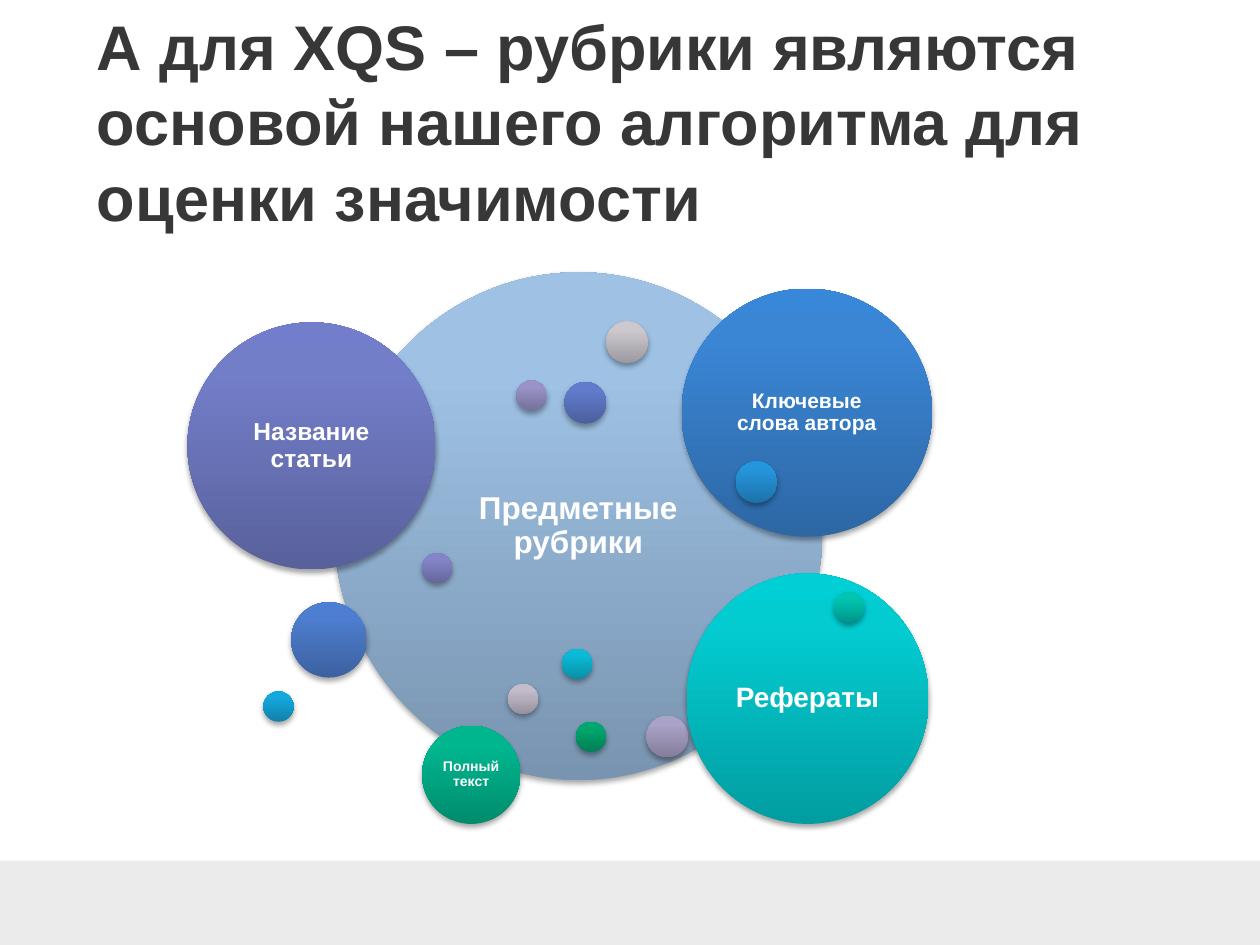
from copy import deepcopy

from lxml import etree
from pptx import Presentation
from pptx import util as u
from pptx.dml.color import RGBColor
from pptx.enum import shapes, text
from pptx.oxml.ns import qn

COLORS = {
    "title": "373737", "band": "EBEBEB", "label": "FFFFFF", "shadow": "000000",
    # bubble gradients: bottom, upper part, top
    "sky": ("7994B0", "9EC1E4", "9DC2E7"),
    "silver": ("9D9A9F", "CCC8CE", "CDC9CF"),
    "mist": ("96919C", "C3BCCB", "C4BDCC"),
    "haze": ("8E879A", "B9B0C8", "B9B0CA"),
    "mauve": ("847D99", "ABA2C7", "ABA2C9"),
    "lilac": ("767199", "9993C7", "9993C9"),
    "violet": ("65669A", "8484C8", "8383CA"),
    "indigo": ("58619B", "737EC9", "727DCC"),
    "iris": ("4B5F9D", "617CCC", "5F7BCF"),
    "royal": ("3C61A0", "4E7ED0", "4C7ED4"),
    "blue": ("2D67A4", "3A86D5", "3887D9"),
    "azure": ("1D72A9", "2595DB", "2296E0"),
    "cyan": ("1081AA", "14A8DD", "10AAE2"),
    "aqua": ("098FA6", "0BBAD7", "07BDDC"),
    "turquoise": ("029DA1", "03CCD1", "00CFD5"),
    "teal": ("009789", "00C5B1", "00C5B2"),
    "jade": ("008C6D", "00B68E", "00B68F"),
    "green": ("008055", "00A76E", "00A76F"),
}
STOPS = (0, 0.8, 1)
SMALL, MEDIUM = 0.61, 0.84

# Bubbles from back to front: colour, left, top, width, height (cm), label, size (pt)
BUBBLES = [
    ("sky", 6.73, 5.49, 9.86, 10.24, "Предметные рубрики", 18),
    ("silver", 12.22, 6.48, MEDIUM, MEDIUM, "", 0),
    ("mist", 10.24, 13.79, SMALL, SMALL, "", 0),
    ("haze", 15.93, 9.88, SMALL, SMALL, "", 0),
    ("mauve", 13.03, 14.43, MEDIUM, MEDIUM, "", 0),
    ("lilac", 10.41, 7.67, SMALL, SMALL, "", 0),
    ("violet", 8.51, 11.15, SMALL, SMALL, "", 0),
    ("indigo", 3.78, 6.5, 5, 4.98, "Название статьи", 14),
    ("iris", 11.38, 7.7, MEDIUM, MEDIUM, "", 0),
    ("royal", 5.87, 12.14, 1.52, 1.52, "", 0),
    ("blue", 13.74, 5.82, 5.05, 5, "Ключевые слова автора", 12),
    ("azure", 14.83, 9.3, MEDIUM, MEDIUM, "", 0),
    ("cyan", 5.31, 13.94, SMALL, SMALL, "", 0),
    ("aqua", 11.33, 13.08, SMALL, SMALL, "", 0),
    ("turquoise", 13.84, 11.56, 4.88, 5.05, "Рефераты", 16),
    ("teal", 16.81, 11.94, SMALL, SMALL, "", 0),
    ("jade", 8.51, 14.63, 1.98, 1.98, "Полный текст", 8),
    ("green", 11.61, 14.55, SMALL, SMALL, "", 0),
]


def set_font(p, size, color):
    p.font.name = "Arial"
    p.font.size = u.Pt(size)
    p.font.bold = True
    p.font.color.rgb = RGBColor.from_string(COLORS[color])


def shade(sp, colors):
    """Vertical three-stop gradient with a soft shadow below."""
    sp.fill.gradient()
    sp.fill.gradient_angle = 90
    stops = sp._element.spPr.find(".//" + qn("a:gsLst"))
    stops.insert(1, deepcopy(stops[0]))
    for stop, position, color in zip(sp.fill.gradient_stops, STOPS, colors):
        stop.position = position
        stop.color.rgb = RGBColor.from_string(color)
    sp.line.fill.background()
    sp.shadow.inherit = False
    effects = sp._element.spPr.find(qn("a:effectLst"))
    shadow = etree.SubElement(effects, qn("a:outerShdw"), blurRad="40000",
                              dist="23000", dir="5400000", rotWithShape="0")
    color = etree.SubElement(shadow, qn("a:srgbClr"), val=COLORS["shadow"])
    etree.SubElement(color, qn("a:alpha"), val="35000")


prs = Presentation()
prs.slide_width, prs.slide_height = u.Cm(25.4), u.Cm(19.05)
s = prs.slides.add_slide(prs.slide_layouts[5])

# Footer band
band = s.shapes.add_shape(shapes.MSO_SHAPE.RECTANGLE,
                          0, u.Cm(17.35), prs.slide_width, u.Cm(1.7))
band.fill.solid()
band.fill.fore_color.rgb = RGBColor.from_string(COLORS["band"])
band.line.fill.background()
band.shadow.inherit = False

# Title
title = s.shapes.title
title.left, title.top = u.Cm(1.7), u.Cm(0.84)
title.width, title.height = u.Cm(22.86), u.Cm(3.18)
tf = title.text_frame
tf.text = "А для XQS – рубрики являются основой нашего алгоритма для оценки значимости"
tf.word_wrap = True
tf.auto_size = text.MSO_AUTO_SIZE.NONE
tf.vertical_anchor = text.MSO_ANCHOR.MIDDLE
p = tf.paragraphs[0]
p.alignment = text.PP_ALIGN.LEFT
p.line_spacing = 1.0
set_font(p, 36, "title")

# Bubble diagram
diagram = s.shapes.add_group_shape()
for color, left, top, width, height, label, size in BUBBLES:
    sp = diagram.shapes.add_shape(shapes.MSO_SHAPE.OVAL, u.Cm(left), u.Cm(top),
                                  u.Cm(width), u.Cm(height))
    shade(sp, COLORS[color])
    if label:
        tf = sp.text_frame
        tf.text = label
        tf.word_wrap = True
        tf.vertical_anchor = text.MSO_ANCHOR.MIDDLE
        # Margins grow with the text size
        tf.margin_left = tf.margin_right = u.Cm(size / 100)
        tf.margin_top = tf.margin_bottom = u.Cm(size / 100)
        p = tf.paragraphs[0]
        p.alignment = text.PP_ALIGN.CENTER
        p.line_spacing = 0.9
        set_font(p, size, "label")

prs.save("out.pptx")
